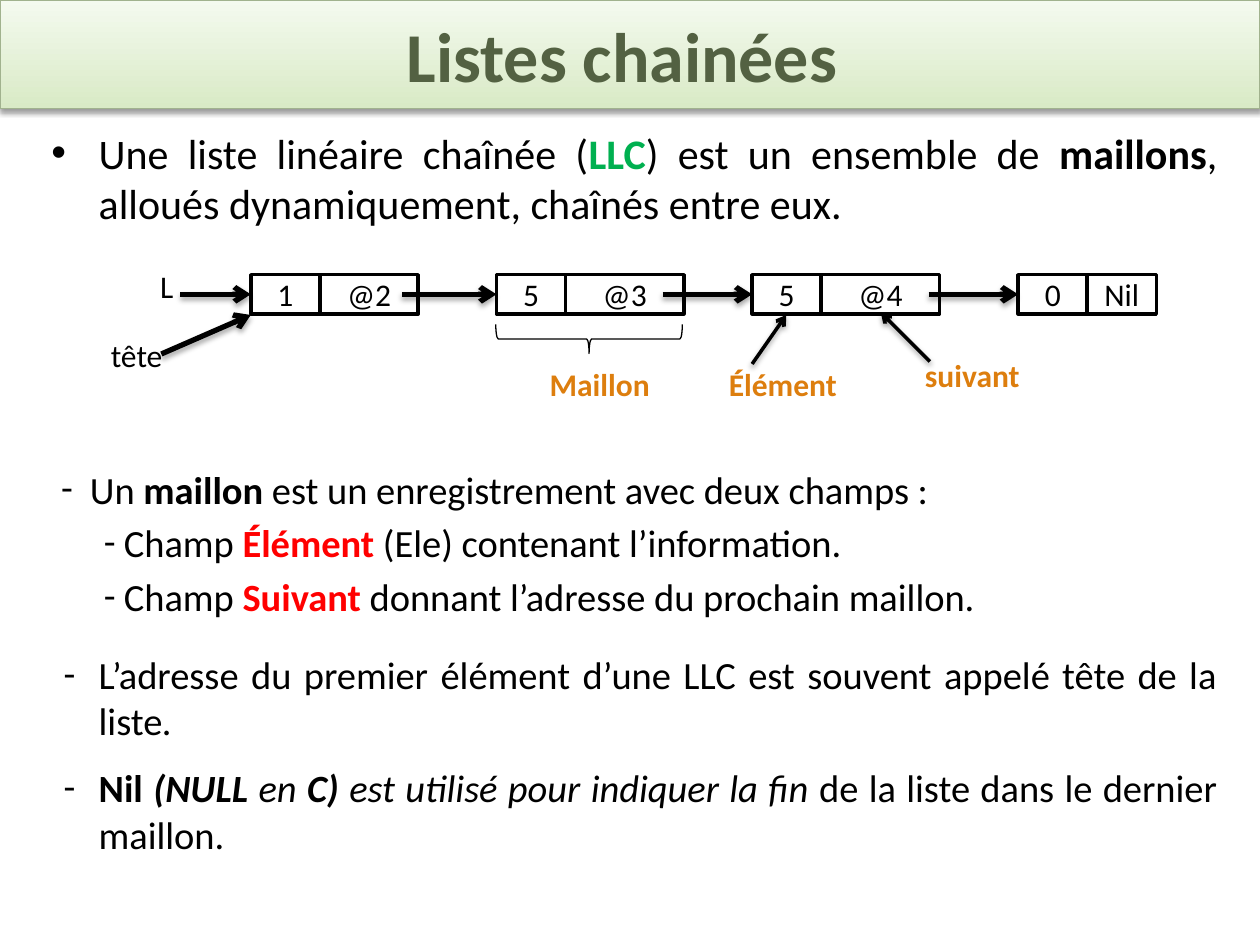
from dataclasses import dataclass
from lxml import etree
from pptx import Presentation
from pptx.dml.color import RGBColor
from pptx.enum import shapes, text
from pptx.oxml import ns
from pptx.util import Pt


@dataclass(frozen=True)
class Theme:
    font: str = "Calibri"
    black: str = "000000"
    white: str = "FFFFFF"
    green: str = "00B050"
    red: str = "FF0000"
    orange: str = "DD7E0E"
    title: str = "536142"
    edge: str = "A1B28E"
    low: str = "D9EAC6"
    high: str = "F4FAEF"
    head: int = 40
    lead: int = 24
    body: int = 22
    label: int = 18


def rgb(code):
    return RGBColor.from_string(code)


def sub(node, tag, **attrs):
    return etree.SubElement(node, ns.qn("a:" + tag), attrs)


def assign(item, values):
    for name, value in values.items():
        setattr(item, name, value)


class Deck:
    def __init__(self, slide, theme):
        self.slide, self.theme = slide, theme

    def shade(self, shape, alpha=35):
        """Give a shape a soft shadow straight below it."""
        shadow = sub(sub(shape._element.spPr, "effectLst"), "outerShdw",
                     blurRad=str(Pt(3.1)), dist=str(Pt(1.8)), dir="5400000",
                     algn="t", rotWithShape="0")
        sub(sub(shadow, "srgbClr", val=self.theme.black), "alpha",
            val=str(alpha * 1000))

    def run(self, para, words, size, color=None, **fmt):
        run = para.add_run()
        run.text = words
        assign(run.font, dict(name=self.theme.font, size=Pt(size), **fmt))
        run.font.color.rgb = rgb(color or self.theme.black)

    def center(self, shape, words, size, **fmt):
        """Centre one line of text in a shape."""
        frame = shape.text_frame
        assign(frame, dict(word_wrap=True, margin_left=0, margin_right=0,
                           margin_top=0, margin_bottom=0,
                           vertical_anchor=text.MSO_ANCHOR.MIDDLE))
        para = frame.paragraphs[0]
        para.alignment = text.PP_ALIGN.CENTER
        self.run(para, words, size, **fmt)

    def shape(self, kind, x, y, w, h, line, width=2):
        shape = self.slide.shapes.add_shape(kind, Pt(x), Pt(y), Pt(w), Pt(h))
        shape.line.color.rgb = rgb(line)
        shape.line.width = Pt(width)
        return shape

    def cell(self, x, y, w, h, words):
        box = self.shape(shapes.MSO_SHAPE.RECTANGLE, x, y, w, h,
                         self.theme.black)
        box.shadow.inherit = False
        box.fill.solid()
        box.fill.fore_color.rgb = rgb(self.theme.white)
        self.center(box, words, self.theme.label)

    def label(self, x, y, w, h, words, **fmt):
        box = self.slide.shapes.add_textbox(Pt(x), Pt(y), Pt(w), Pt(h))
        self.center(box, words, self.theme.label, **fmt)

    def brace(self, x, y, w, h):
        brace = self.shape(shapes.MSO_SHAPE.RIGHT_BRACE, x, y, w, h,
                           self.theme.black, 0.75)
        brace.shadow.inherit = False
        brace.fill.background()
        brace.rotation = 90

    def arrow(self, x1, y1, x2, y2, width=3):
        line = self.slide.shapes.add_connector(
            shapes.MSO_CONNECTOR.STRAIGHT, Pt(x1), Pt(y1), Pt(x2), Pt(y2))
        line.line.color.rgb = rgb(self.theme.black)
        line.line.width = Pt(width)
        sub(line.line._get_or_add_ln(), "tailEnd", type="arrow")
        self.shade(line)

    def list(self, x, y, w, h, size, items):
        """Each item: bullet, text indent, hang, space before, justified, runs."""
        frame = self.slide.shapes.add_textbox(
            Pt(x), Pt(y), Pt(w), Pt(h)).text_frame
        frame.word_wrap = True
        for i, (mark, left, hang, gap, full, runs) in enumerate(items):
            para = frame.add_paragraph() if i else frame.paragraphs[0]
            props = para._p.get_or_add_pPr()
            props.set("marL", str(Pt(left)))
            props.set("indent", str(-Pt(hang)))
            sub(props, "buFont", typeface="Arial" if mark == "•" else "Calibri")
            sub(props, "buChar", char=mark)
            align = text.PP_ALIGN.JUSTIFY if full else text.PP_ALIGN.LEFT
            assign(para, dict(alignment=align, space_before=Pt(gap)))
            for words, fmt in runs:
                self.run(para, words, size, **fmt)

    def title(self, w, h, words):
        bar = self.shape(shapes.MSO_SHAPE.RECTANGLE, 0, 0, w, h,
                         self.theme.edge, 0.75)
        bar.fill.gradient()
        bar.fill.gradient_angle = 90
        for stop, code in zip(bar.fill.gradient_stops,
                              (self.theme.low, self.theme.high)):
            stop.color.rgb = rgb(code)
        self.shade(bar, 38)
        self.center(bar, words, self.theme.head, color=self.theme.title,
                    bold=True)


def main():
    theme = Theme()
    show = Presentation()
    assign(show, dict(slide_width=Pt(720), slide_height=Pt(540)))
    deck = Deck(show.slides.add_slide(show.slide_layouts[6]), theme)

    bold, slant = dict(bold=True), dict(italic=True)
    both = dict(bold=True, italic=True)
    red = dict(bold=True, color=theme.red)
    left, wide = 22.3, 680.4
    deck.list(left, 69.1, wide, 70, theme.lead, [
        ("•", 27, 27, 0, True, [
            ("Une liste linéaire chaînée (", {}),
            ("LLC", dict(bold=True, color=theme.green)),
            (") est un ensemble de ", {}), ("maillons", bold),
            (", alloués dynamiquement, chaînés entre eux.", {})])])
    deck.list(left, 262.5, wide, 250, theme.body, [
        ("-", 22, 16.5, 0, True, [
            ("Un ", {}), ("maillon", bold),
            (" est un enregistrement avec deux champs :", {})]),
        ("-", 41.4, 11.4, 4.4, False, [
            ("Champ ", {}), ("Élément", red),
            (" (Ele) contenant l’information.", {})]),
        ("-", 41.4, 11.4, 4.4, False, [
            ("Champ ", {}), ("Suivant", red),
            (" donnant l’adresse du prochain maillon.", {})]),
        ("-", 27, 20, 18, True, [
            ("L’adresse du premier élément d’une LLC est souvent appelé "
             "tête de la liste", {}), (".", slant)]),
        ("-", 27, 20, 12, True, [
            ("Nil", bold), (" (NULL ", both), ("en", slant), (" C)", both),
            (" est utilisé pour indiquer la fin ", slant),
            ("de la liste dans le dernier maillon.", {})])])

    top, high, slot = 157, 22.4, 39.5
    mid = top + high / 2
    nodes = [(143.3, "1", "@2", 56.2), (283.7, "5", "@3", 67.6),
             (429.8, "5", "@4", 67.6), (581.8, "0", "Nil", slot)]
    for x, value, link, w in nodes:
        deck.cell(x, top, slot, high, value)
        deck.cell(x + slot, top, w, high, link)
    tails = (103, 229.7, 378.7, 530.6)
    for tail, node in zip(tails, nodes):
        deck.arrow(tail, mid, node[0], mid)

    deck.brace(328.3, 140.4, 16.6, 106.6)
    deck.arrow(92.2, 202.3, 143.3, 180)
    deck.arrow(429.8, 208, 449.3, 180, 2)
    deck.arrow(531.4, 206.6, 503.3, 178.6, 2)
    deck.label(75.6, 152, slot, high, "L")
    deck.label(36, 191.5, 84.2, high, "tête")
    for x, y, words in ((289.4, 208, "Maillon"), (394, 208, "Élément"),
                        (502.3, 202.8, "suivant")):
        deck.label(x, y, 106.6, high, words, color=theme.orange, bold=True)

    deck.title(720, 61.9, "Listes chainées ")
    show.save("out.pptx")


if __name__ == "__main__":
    main()
